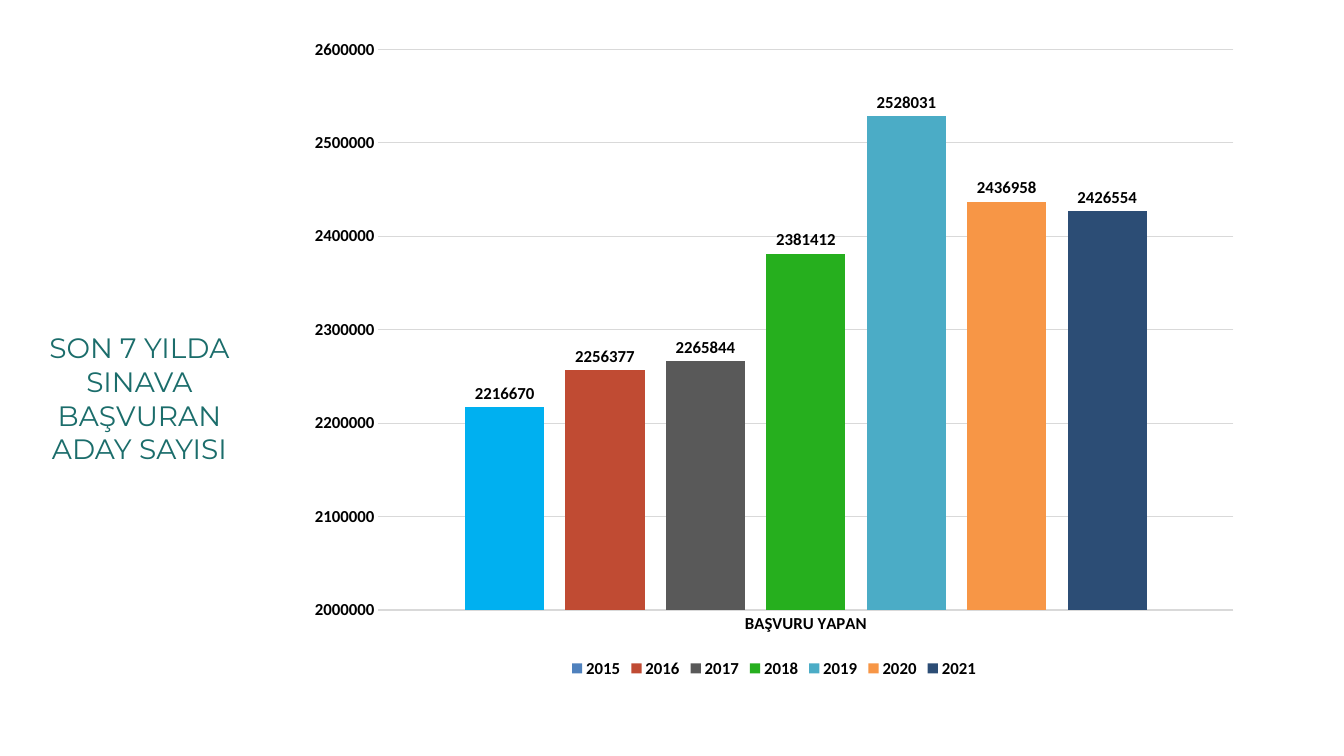
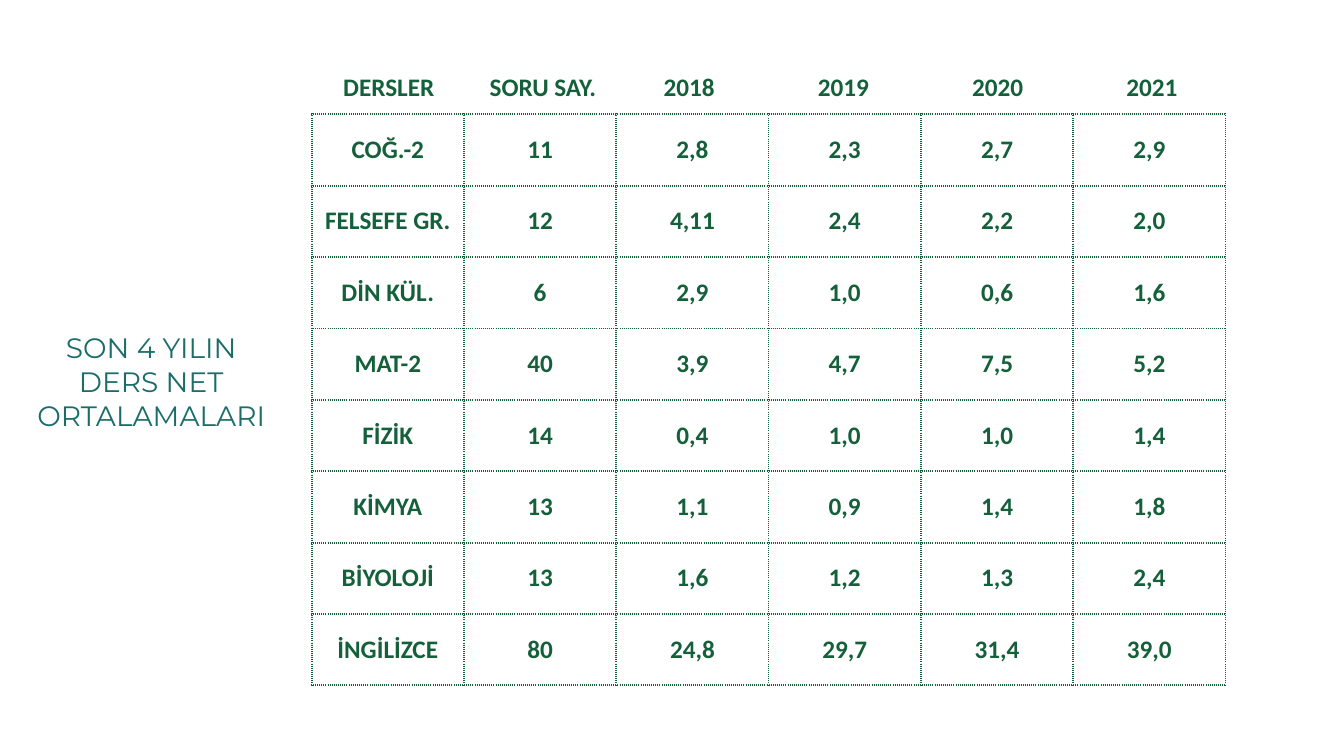
from lxml import etree
from pptx import Presentation
from pptx.chart.data import CategoryChartData
from pptx.dml.color import RGBColor
from pptx.enum.chart import XL_CHART_TYPE, XL_LABEL_POSITION, XL_LEGEND_POSITION, XL_TICK_MARK
from pptx.enum.text import MSO_ANCHOR, MSO_AUTO_SIZE, PP_ALIGN
from pptx.oxml.ns import qn
from pptx.util import Inches, Pt

COLUMNS = XL_CHART_TYPE.COLUMN_CLUSTERED
OUTSIDE_END = XL_LABEL_POSITION.OUTSIDE_END
BOTTOM = XL_LEGEND_POSITION.BOTTOM
NO_TICK = XL_TICK_MARK.NONE
TOP, MIDDLE = MSO_ANCHOR.TOP, MSO_ANCHOR.MIDDLE
FIXED = MSO_AUTO_SIZE.NONE
CENTER = PP_ALIGN.CENTER

TEAL = RGBColor(0x1B, 0x6D, 0x6B)
GREEN = RGBColor(0x14, 0x60, 0x3A)
BLACK = RGBColor(0x00, 0x00, 0x00)
GRID_GREY = RGBColor(0xD9, 0xD9, 0xD9)
SKY = RGBColor(0x00, 0xB0, 0xF0)
BLUE = RGBColor(0x4F, 0x81, 0xBD)
BRICK = RGBColor(0xC0, 0x4B, 0x33)
GREY = RGBColor(0x59, 0x59, 0x59)
LEAF = RGBColor(0x26, 0xAF, 0x1E)
AQUA = RGBColor(0x4B, 0xAC, 0xC6)
ORANGE = RGBColor(0xF7, 0x96, 0x46)
NAVY = RGBColor(0x2C, 0x4D, 0x75)

GRID_COLUMNS, GRID_ROWS = 80, 45
TITLE_TOP = 19.4

APPLICANTS = [
    ("2015", 2216670, BLUE),
    ("2016", 2256377, BRICK),
    ("2017", 2265844, GREY),
    ("2018", 2381412, LEAF),
    ("2019", 2528031, AQUA),
    ("2020", 2436958, ORANGE),
    ("2021", 2426554, NAVY),
]

NET_AVERAGES = [
    ("COĞ.-2", "11", "2,8", "2,3", "2,7", "2,9"),
    ("FELSEFE GR.", "12", "4,11", "2,4", "2,2", "2,0"),
    ("DİN KÜL.", "6", "2,9", "1,0", "0,6", "1,6"),
    ("MAT-2", "40", "3,9", "4,7", "7,5", "5,2"),
    ("FİZİK", "14", "0,4", "1,0", "1,0", "1,4"),
    ("KİMYA", "13", "1,1", "0,9", "1,4", "1,8"),
    ("BİYOLOJİ", "13", "1,6", "1,2", "1,3", "2,4"),
    ("İNGİLİZCE", "80", "24,8", "29,7", "31,4", "39,0"),
]


class Deck:
    def __init__(self):
        self.presentation = Presentation()
        self.presentation.slide_width = Inches(13.33)
        self.presentation.slide_height = Inches(7.5)
        self.slide = None

    def box(self, left, top, width, height):
        column = self.presentation.slide_width / GRID_COLUMNS
        row = self.presentation.slide_height / GRID_ROWS
        return [round(left * column), round(top * row), round(width * column), round(height * row)]

    def style_font(self, font, size, color, bold=True, name="Calibri"):
        font.name = name
        font.size = Pt(size)
        font.bold = bold
        font.color.rgb = color

    def set_text(self, frame, text, size, color, bold=True, name="Calibri"):
        frame.text = text
        frame.word_wrap = True
        paragraph = frame.paragraphs[0]
        paragraph.alignment = CENTER
        self.style_font(paragraph.runs[0].font, size, color, bold, name)

    def add_slide(self, heading, left, width, height):
        self.slide = self.presentation.slides.add_slide(self.presentation.slide_layouts[5])
        title = self.slide.shapes.title
        title.left, title.top, title.width, title.height = self.box(left, TITLE_TOP, width, height)
        self.set_text(title.text_frame, heading, 20, TEAL, False, "Montserrat")
        title.text_frame.auto_size = FIXED
        title.text_frame.vertical_anchor = TOP

    def add_headers(self, labels, left, top, width, height):
        for index, label in enumerate(labels):
            header = self.slide.shapes.add_textbox(*self.box(left + index * width, top, width, height))
            self.set_text(header.text_frame, label, 18, GREEN)

    def add_dotted_border(self, cell):
        properties = cell._tc.get_or_add_tcPr()
        for side in ("a:lnL", "a:lnR", "a:lnT", "a:lnB"):
            line = etree.SubElement(properties, qn(side), w=str(Pt(1.5)))
            fill = etree.SubElement(line, qn("a:solidFill"))
            etree.SubElement(fill, qn("a:srgbClr"), val=str(GREEN))
            etree.SubElement(line, qn("a:prstDash"), val="sysDot")

    def add_table(self, rows, left, top, width, height):
        frame = self.slide.shapes.add_table(len(rows), len(rows[0]), *self.box(left, top, width, height))
        table = frame.table
        table.first_row = table.horz_banding = False
        for row, values in enumerate(rows):
            for column, value in enumerate(values):
                cell = table.cell(row, column)
                self.set_text(cell.text_frame, value, 18, GREEN)
                cell.vertical_anchor = MIDDLE
                self.add_dotted_border(cell)
                cell.fill.background()

    def add_column_chart(self, category, records, left, top, width, height):
        data = CategoryChartData()
        data.categories = [category]
        for year, count, _ in records:
            data.add_series(year, [count])
        chart = self.slide.shapes.add_chart(COLUMNS, *self.box(left, top, width, height), data).chart
        chart.has_title = False
        self.style_font(chart.font, 10, BLACK, False)
        chart.has_legend = True
        chart.legend.position = BOTTOM
        chart.legend.include_in_layout = False
        self.style_font(chart.legend.font, 12, BLACK)
        plot = chart.plots[0]
        plot.vary_by_categories = False
        plot.gap_width, plot.overlap = 219, -27
        for series, (_, _, color) in zip(plot.series, records):
            self.paint(series, color)
            labels = series.data_labels
            labels.show_value = True
            labels.position = OUTSIDE_END
            self.style_font(labels.font, 12, BLACK)
        self.paint(plot.series[0].points[0], SKY)
        self.style_axes(chart)

    def paint(self, bar, color):
        bar.format.fill.solid()
        bar.format.fill.fore_color.rgb = color

    def style_axes(self, chart):
        counts = chart.value_axis
        for axis in (chart.category_axis, counts):
            axis.major_tick_mark = axis.minor_tick_mark = NO_TICK
            self.style_font(axis.tick_labels.font, 12, BLACK)
        counts.minimum_scale, counts.maximum_scale, counts.major_unit = 2000000, 2600000, 100000
        counts.format.line.fill.background()
        counts.has_major_gridlines = True
        for line in (counts.major_gridlines.format.line, chart.category_axis.format.line):
            line.color.rgb = GRID_GREY
            line.width = Pt(0.75)


def main():
    deck = Deck()

    deck.add_slide("SON 7 YILDA SINAVA BAŞVURAN ADAY SAYISI", 1.75, 13.1, 8.7)
    deck.add_column_chart("BAŞVURU YAPAN", APPLICANTS, 17.6, 1.56, 56.95, 39.06)

    deck.add_slide("SON 4 YILIN DERS NET ORTALAMALARI", 1, 16, 6.7)
    deck.add_table(NET_AVERAGES, 18.55, 6.8, 54.4, 34)
    deck.add_headers(["DERSLER", "SORU SAY."], 18.55, 3.97, 9.18, 2.4)
    deck.add_headers(["2018", "2019", "2020", "2021"], 36.43, 3.97, 9.18, 2.4)

    deck.presentation.save("out.pptx")


if __name__ == "__main__":
    main()
